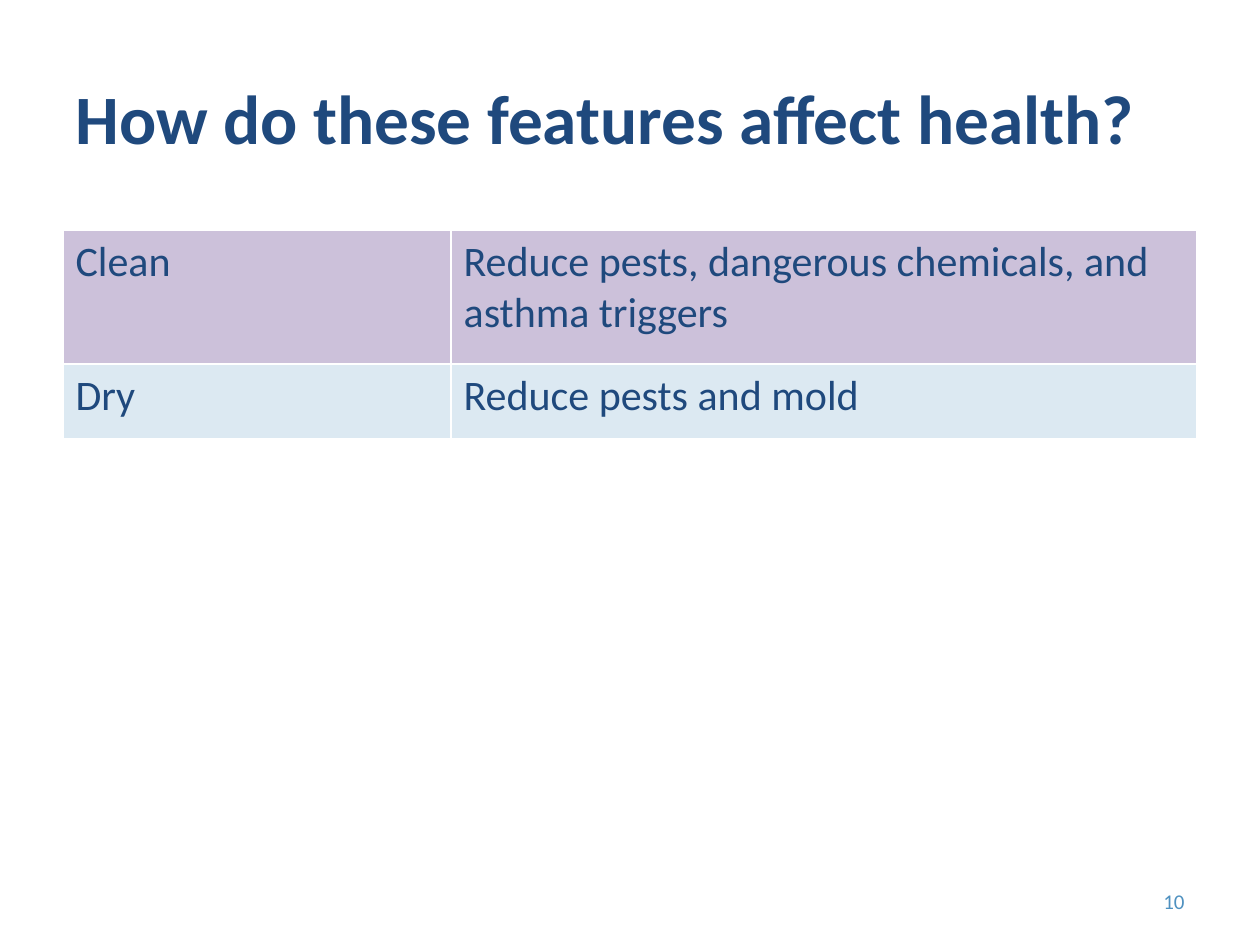
from dataclasses import dataclass

from lxml import etree
from pptx import Presentation
from pptx.dml.color import RGBColor
from pptx.enum.text import MSO_ANCHOR, PP_ALIGN
from pptx.oxml.ns import qn
from pptx.util import Inches, Pt

MIDDLE = MSO_ANCHOR.MIDDLE
LEFT, RIGHT = PP_ALIGN.LEFT, PP_ALIGN.RIGHT
BLANK_LAYOUT = 6


@dataclass(frozen=True)
class Theme:
    """Colours, font and type sizes of the slide."""

    font: str = "Calibri"
    navy: str = "1F497D"
    blue: str = "4F91C0"
    border: str = "FFFFFF"
    row_fills: tuple = ("CCC1DA", "DCE9F2")
    title_size: float = 39.6
    body_size: float = 24
    number_size: float = 12


THEME = Theme()
FEATURES = (
    ("Clean", "Reduce pests, dangerous chemicals, and asthma triggers"),
    ("Dry", "Reduce pests and mold"),
)
COLUMN_WIDTHS = (3.08, 5.92)
ROW_HEIGHTS = (1.06, 0.59)


def write_text(text_frame, text, size, color=THEME.navy, bold=False, align=LEFT):
    """Write one formatted paragraph into a text frame."""
    text_frame.word_wrap = True
    paragraph = text_frame.paragraphs[0]
    paragraph.alignment = align
    run = paragraph.add_run()
    run.text = text
    run.font.name = THEME.font
    run.font.size = Pt(size)
    run.font.bold = bold
    run.font.color.rgb = RGBColor.from_string(color)


def add_text_box(slide, box, text, **text_format):
    """Add a vertically centred text box that fills the given box."""
    shape = slide.shapes.add_textbox(*map(Inches, box))
    shape.text_frame.vertical_anchor = MIDDLE
    write_text(shape.text_frame, text, **text_format)


def set_borders(cell, color, width):
    """Draw a solid line on all four sides of a table cell."""
    properties = cell._tc.get_or_add_tcPr()
    for position, side in enumerate(("a:lnL", "a:lnR", "a:lnT", "a:lnB")):
        line = etree.Element(qn(side), w=str(Pt(width)))
        fill = etree.SubElement(line, qn("a:solidFill"))
        etree.SubElement(fill, qn("a:srgbClr"), val=color)
        properties.insert(position, line)


def add_feature_table(slide, box):
    """Add the table of home features and their health effects."""
    frame = slide.shapes.add_table(len(FEATURES), len(COLUMN_WIDTHS), *map(Inches, box))
    table = frame.table
    table.first_row = False
    table.horz_banding = False
    for column, width in zip(table.columns, COLUMN_WIDTHS):
        column.width = Inches(width)
    for row, height, texts, color in zip(table.rows, ROW_HEIGHTS, FEATURES, THEME.row_fills):
        row.height = Inches(height)
        for cell, text in zip(row.cells, texts):
            cell.fill.solid()
            cell.fill.fore_color.rgb = RGBColor.from_string(color)
            set_borders(cell, THEME.border, 1)
            write_text(cell.text_frame, text, size=THEME.body_size)


def main():
    """Build the slide and save the presentation."""
    presentation = Presentation()
    presentation.slide_width = Inches(10)
    presentation.slide_height = Inches(7.5)
    slide = presentation.slides.add_slide(presentation.slide_layouts[BLANK_LAYOUT])
    add_text_box(slide, (0.5, 0.3, 9, 1.25), "How do these features affect health?",
                 size=THEME.title_size, bold=True)
    add_feature_table(slide, (0.5, 1.83, sum(COLUMN_WIDTHS), sum(ROW_HEIGHTS)))
    add_text_box(slide, (7.17, 6.95, 2.33, 0.4), "10",
                 size=THEME.number_size, color=THEME.blue, align=RIGHT)
    presentation.save("out.pptx")


if __name__ == "__main__":
    main()
